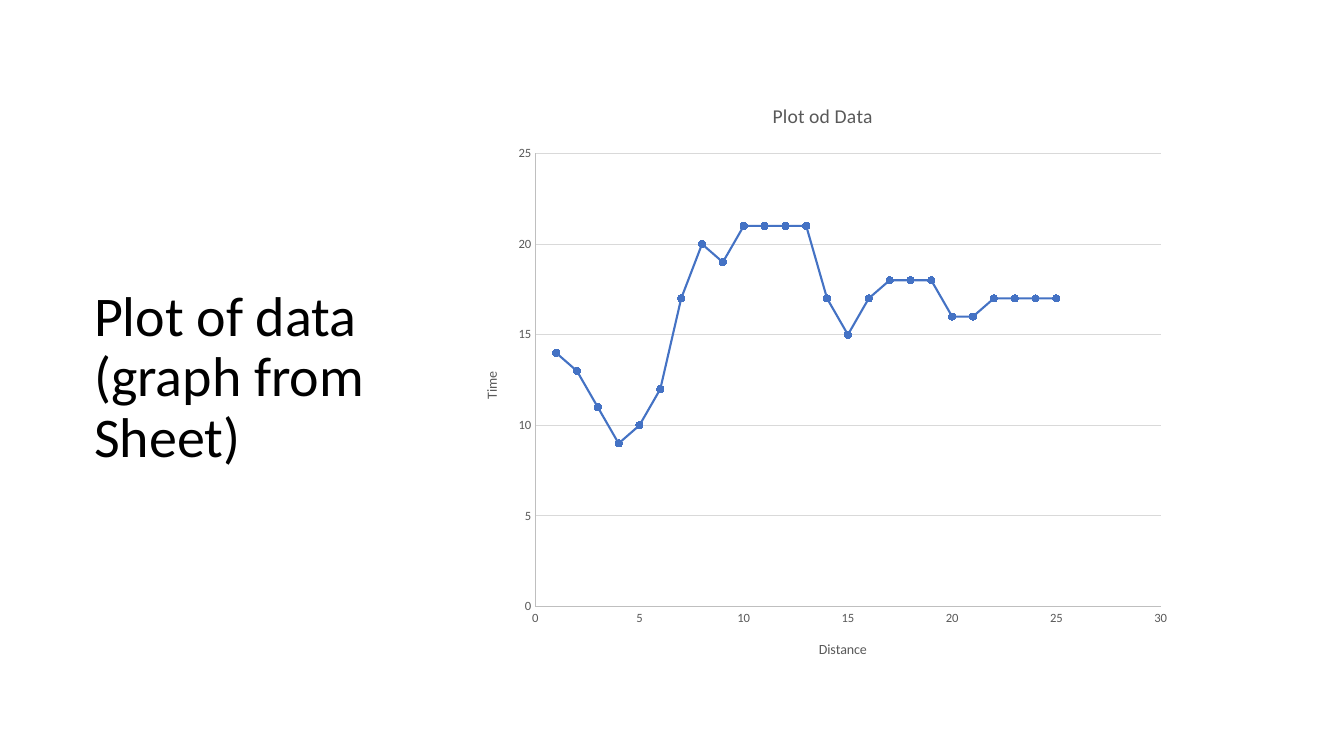
from lxml import etree
from pptx import Presentation
from pptx.chart.data import XyChartData
from pptx.dml.color import RGBColor
from pptx.enum.chart import XL_CHART_TYPE, XL_MARKER_STYLE, XL_TICK_MARK
from pptx.enum.text import MSO_ANCHOR, MSO_AUTO_SIZE, PP_ALIGN
from pptx.oxml import parse_xml
from pptx.oxml.ns import nsdecls, qn
from pptx.util import Pt

SMOOTH_SCATTER = XL_CHART_TYPE.XY_SCATTER_SMOOTH
CIRCLE = XL_MARKER_STYLE.CIRCLE
NO_TICK = XL_TICK_MARK.NONE
MIDDLE = MSO_ANCHOR.MIDDLE
NO_AUTOFIT = MSO_AUTO_SIZE.NONE
LEFT = PP_ALIGN.LEFT

TIMES = [14, 13, 11, 9, 10, 12, 17, 20, 19, 21, 21, 21, 21,
         17, 15, 17, 18, 18, 18, 16, 16, 17, 17, 17, 17]


def color(value):
    return RGBColor.from_string(value)


class SlideBuilder:
    font_name = "Calibri"
    black = "000000"
    gray = "595959"
    axis_gray = "BFBFBF"
    grid_gray = "D9D9D9"
    blue = "4472C4"

    def __init__(self, slide):
        self.slide = slide

    def style_font(self, font, size, hex_color):
        font.name = self.font_name
        font.size = Pt(size)
        font.bold = False
        font.color.rgb = color(hex_color)

    def style_line(self, line, width, hex_color):
        line.width = Pt(width)
        line.color.rgb = color(hex_color)

    def title(self, text, left, top, width, height):
        shape = self.slide.shapes.title
        shape.left, shape.top = Pt(left), Pt(top)
        shape.width, shape.height = Pt(width), Pt(height)
        text_frame = shape.text_frame
        text_frame.text = text
        text_frame.word_wrap = True
        text_frame.auto_size = NO_AUTOFIT
        text_frame.vertical_anchor = MIDDLE
        paragraph = text_frame.paragraphs[0]
        paragraph.alignment = LEFT
        paragraph.line_spacing = 0.9
        self.style_font(paragraph.runs[0].font, 40, self.black)

    def chart_text(self, text_frame, text, size):
        text_frame.text = text
        self.style_font(text_frame.paragraphs[0].runs[0].font, size, self.gray)

    def axis(self, axis, title, maximum, has_gridlines):
        axis.minimum_scale, axis.maximum_scale = 0, maximum
        axis.major_unit = 5
        axis.major_tick_mark = axis.minor_tick_mark = NO_TICK
        axis.has_major_gridlines = has_gridlines
        if has_gridlines:
            self.style_line(axis.major_gridlines.format.line, 0.75, self.grid_gray)
        self.style_line(axis.format.line, 0.75, self.axis_gray)
        self.style_font(axis.tick_labels.font, 9, self.gray)
        axis.tick_labels.number_format = "General"
        axis.tick_labels.number_format_is_linked = False
        self.chart_text(axis.axis_title.text_frame, title, 10)

    def plot_layout(self, chart, **fractions):
        plot_area = chart._chartSpace.chart.plotArea
        for old_layout in plot_area.findall(qn("c:layout")):
            plot_area.remove(old_layout)
        layout = parse_xml(f"<c:layout {nsdecls('c')}><c:manualLayout/></c:layout>")
        settings = {"layoutTarget": "inner", "xMode": "edge", "yMode": "edge", **fractions}
        for name, value in settings.items():
            etree.SubElement(layout[0], qn(f"c:{name}")).set("val", str(value))
        plot_area.insert(0, layout)

    def scatter(self, title, times, left, top, width, height):
        data = XyChartData()
        points = data.add_series("Series 1")
        for distance, time in enumerate(times, start=1):
            points.add_data_point(distance, time)
        chart = self.slide.shapes.add_chart(
            SMOOTH_SCATTER, Pt(left), Pt(top), Pt(width), Pt(height), data).chart
        self.style_font(chart.font, 10, self.black)
        chart.has_legend = False
        chart.has_title = True
        self.chart_text(chart.chart_title.text_frame, title, 14)
        chart.plots[0].vary_by_categories = False

        series = chart.plots[0].series[0]
        series.smooth = True
        self.style_line(series.format.line, 1.5, self.blue)
        series.marker.style = CIRCLE
        series.marker.size = 5
        series.marker.format.fill.solid()
        series.marker.format.fill.fore_color.rgb = color(self.blue)
        self.style_line(series.marker.format.line, 0.75, self.blue)

        self.axis(chart.category_axis, "Distance", 30, False)
        self.axis(chart.value_axis, "Time", 25, True)
        self.plot_layout(chart, x=0.1, y=0.12, w=0.87, h=0.76)


def main():
    presentation = Presentation()
    presentation.slide_width = Pt(960)
    presentation.slide_height = Pt(540)
    title_only = presentation.slide_layouts[5]
    builder = SlideBuilder(presentation.slides.add_slide(title_only))

    # Title on the left
    builder.title("Plot of data (graph from Sheet)", 60, 67.5, 297.5, 406)

    # Time against distance on the right
    builder.scatter("Plot od Data", TIMES, 331, 58.5, 513.5, 426)

    presentation.save("out.pptx")


if __name__ == "__main__":
    main()
